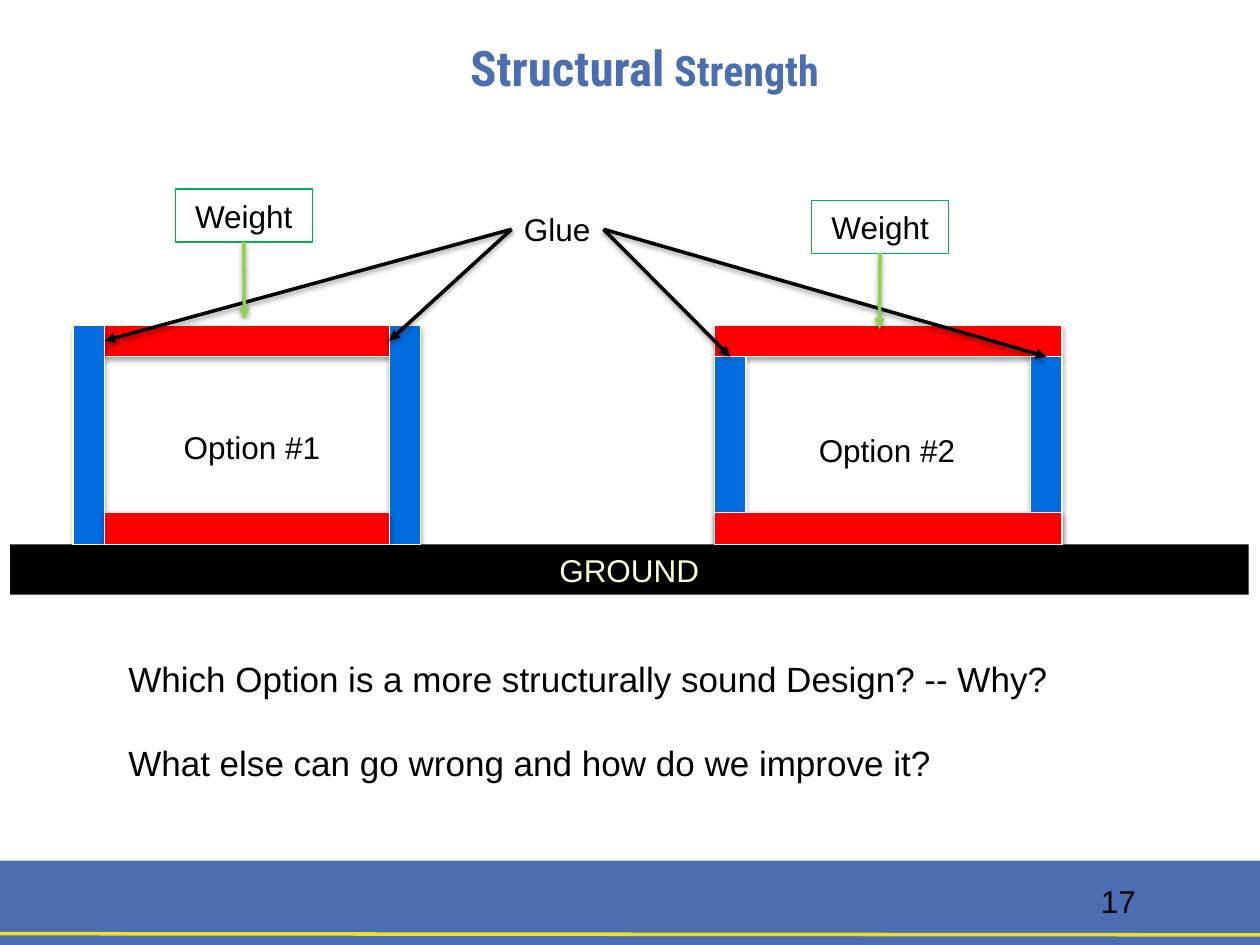
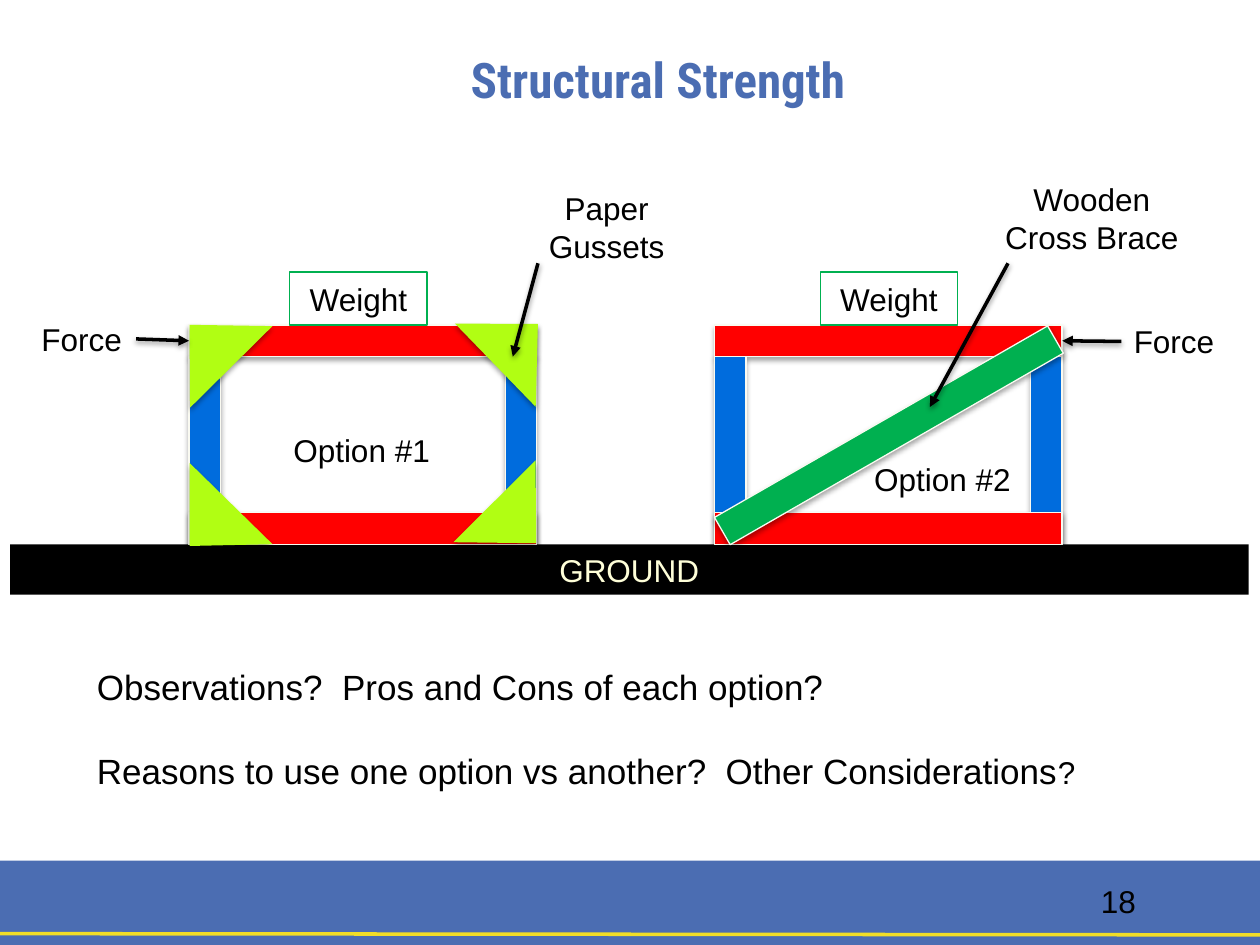
from dataclasses import dataclass
from typing import NamedTuple

from lxml.etree import SubElement
from pptx import Presentation
from pptx.dml.color import RGBColor
from pptx.enum.shapes import MSO_CONNECTOR, MSO_SHAPE
from pptx.enum.text import MSO_ANCHOR, PP_ALIGN
from pptx.oxml.ns import qn
from pptx.shapes.autoshape import Shape
from pptx.shapes.connector import Connector
from pptx.slide import Slide
from pptx.util import Inches, Pt

BLACK = RGBColor(0x00, 0x00, 0x00)
FOOTER_BLUE = RGBColor(0x4B, 0x6D, 0xB2)
FOOTER_YELLOW = RGBColor(0xF1, 0xDE, 0x27)
BEAM_RED = RGBColor(0xFF, 0x00, 0x00)
POST_BLUE = RGBColor(0x00, 0x6C, 0xDD)
EDGE_WHITE = RGBColor(0xFA, 0xFA, 0xF1)
GROUND_CREAM = RGBColor(0xFF, 0xFF, 0xD9)
BRACE_GREEN = RGBColor(0x00, 0xB0, 0x50)
LOAD_GREEN = RGBColor(0x92, 0xD0, 0x50)
GUSSET_LIME = RGBColor(0xB1, 0xFE, 0x13)

BODY_FONT = "Arial"
TITLE_FONT = "Roboto Condensed"

TOP, LEFT, BOTTOM, RIGHT = range(4)

FRAME_TOP = 2.58
GROUND_TOP = 4.32
FRAME_WIDTH = 2.76
STICK = 0.25


class Box(NamedTuple):
    left: float
    top: float
    width: float
    height: float


class Point(NamedTuple):
    x: float
    y: float


class Side(NamedTuple):
    shape: Shape
    site: int


class Run(NamedTuple):
    text: str
    size: float


class Shadow(NamedTuple):
    opacity: int
    distance: float


class Gusset(NamedTuple):
    left: float
    top: float
    rotation: float


@dataclass
class Frame:
    left: float
    beams_between_posts: bool = False


@dataclass
class BuiltFrame:
    top_beam: Shape
    left_post: Shape
    right_post: Shape


STICK_SHADOW = Shadow(35, 1.8)
ARROW_SHADOW = Shadow(38, 1.6)

GUSSETS = (
    Gusset(3.64, 2.5, 45.9),
    Gusset(3.63, 3.91, 135.1),
    Gusset(1.21, 2.51, 315.3),
    Gusset(1.21, 3.93, 224.4),
)


def inches(box: Box) -> list:
    return [Inches(length) for length in box]


def write(
    shape: Shape,
    *paragraphs: str | list[Run],
    size: float = 18,
    color: RGBColor = BLACK,
    font: str = BODY_FONT,
    bold: bool = False,
    align: PP_ALIGN = PP_ALIGN.LEFT,
    anchor: MSO_ANCHOR = MSO_ANCHOR.TOP,
    wrap: bool = True,
    gap: float = 0,
) -> None:
    frame = shape.text_frame
    frame.word_wrap = wrap
    frame.vertical_anchor = anchor
    for index, content in enumerate(paragraphs):
        paragraph = frame.add_paragraph() if index else frame.paragraphs[0]
        paragraph.alignment = align
        if index and gap:
            paragraph.space_before = Pt(gap)
        for piece in [Run(content, size)] if isinstance(content, str) else content:
            run = paragraph.add_run()
            run.text = piece.text
            run.font.size = Pt(piece.size)
            run.font.name = font
            run.font.bold = bold
            run.font.color.rgb = color


def add_label(slide: Slide, box: Box, *paragraphs: str | list[Run], **style) -> Shape:
    label = slide.shapes.add_textbox(*inches(box))
    write(label, *paragraphs, **style)
    return label


def cast_shadow(effects, shadow: Shadow) -> None:
    outer = SubElement(
        effects,
        qn("a:outerShdw"),
        blurRad=str(Pt(3.1)),
        dist=str(Pt(shadow.distance)),
        dir="5400000",
        rotWithShape="0",
    )
    tint = SubElement(outer, qn("a:srgbClr"), val=str(BLACK))
    SubElement(tint, qn("a:alpha"), val=str(shadow.opacity * 1000))


def add_block(
    slide: Slide,
    box: Box,
    fill: RGBColor | None = None,
    edge: RGBColor | None = None,
    shadow: Shadow | None = None,
    preset: MSO_SHAPE = MSO_SHAPE.RECTANGLE,
    rotation: float = 0,
) -> Shape:
    block = slide.shapes.add_shape(preset, *inches(box))
    block.rotation = rotation
    if fill is None:
        block.fill.background()
    else:
        block.fill.solid()
        block.fill.fore_color.rgb = fill
    if edge is None:
        block.line.fill.background()
    else:
        block.line.color.rgb = edge
        block.line.width = Pt(0.75)
    block.shadow.inherit = False
    if shadow:
        cast_shadow(block.element.spPr.find(qn("a:effectLst")), shadow)
    return block


def add_line(
    slide: Slide,
    start: Point | Side,
    end: Point | Side,
    color: RGBColor = BLACK,
    arrow: bool = True,
) -> Connector:
    corners = [
        Inches(length)
        for place in (start, end)
        for length in (place if isinstance(place, Point) else (0, 0))
    ]
    line = slide.shapes.add_connector(MSO_CONNECTOR.STRAIGHT, *corners)
    if isinstance(start, Side):
        line.begin_connect(*start)
    if isinstance(end, Side):
        line.end_connect(*end)
    line.line.color.rgb = color
    line.line.width = Pt(2)
    properties = line.element.spPr
    if arrow:
        SubElement(properties.find(qn("a:ln")), qn("a:tailEnd"), type="triangle")
    effects = SubElement(properties, qn("a:effectLst"))
    if arrow:
        cast_shadow(effects, ARROW_SHADOW)
    return line


def add_stick(slide: Slide, box: Box, color: RGBColor, rotation: float = 0) -> Shape:
    return add_block(slide, box, color, EDGE_WHITE, STICK_SHADOW, rotation=rotation)


def add_frame(slide: Slide, frame: Frame) -> BuiltFrame:
    inset = STICK if frame.beams_between_posts else 0
    post_top = FRAME_TOP if frame.beams_between_posts else FRAME_TOP + STICK
    beam_left, beam_width = frame.left + inset, FRAME_WIDTH - 2 * inset
    top_beam = add_stick(slide, Box(beam_left, FRAME_TOP, beam_width, STICK), BEAM_RED)
    right_post, left_post = (
        add_stick(slide, Box(left, post_top, STICK, GROUND_TOP - post_top), POST_BLUE)
        for left in (frame.left + FRAME_WIDTH - STICK, frame.left)
    )
    add_stick(slide, Box(beam_left, GROUND_TOP - STICK, beam_width, STICK), BEAM_RED)
    return BuiltFrame(top_beam, left_post, right_post)


def add_weight(slide: Slide, left: float, top: float) -> Shape:
    weight = add_block(slide, Box(left, top, 1.09, 0.42), edge=BRACE_GREEN)
    write(weight, "Weight", align=PP_ALIGN.CENTER, anchor=MSO_ANCHOR.MIDDLE)
    return weight


def start_slide(prs, title: list[Run], title_box: Box, number: int) -> Slide:
    slide = prs.slides.add_slide(prs.slide_layouts[5])
    add_block(slide, Box(0, 6.83, 10, 0.67), FOOTER_BLUE)
    add_line(slide, Point(0, 7.41), Point(10, 7.42), FOOTER_YELLOW, arrow=False)
    heading = slide.shapes.title
    heading.left, heading.top, heading.width, heading.height = inches(title_box)
    write(heading, title, font=TITLE_FONT, color=FOOTER_BLUE, bold=True, align=PP_ALIGN.CENTER)
    add_label(slide, Box(7.75, 6.95, 2.25, 0.4), str(number), align=PP_ALIGN.CENTER)
    ground = add_block(slide, Box(0.08, GROUND_TOP, 9.83, 0.4), BLACK)
    write(ground, "GROUND", color=GROUND_CREAM, align=PP_ALIGN.CENTER, anchor=MSO_ANCHOR.MIDDLE)
    return slide


def build_glue_slide(prs) -> None:
    title = [Run("Structural", 28), Run(" Strength", 24)]
    slide = start_slide(prs, title, Box(3.25, 0.25, 3.73, 0.72), 17)
    option_1 = add_frame(slide, Frame(0.58, beams_between_posts=True))
    option_2 = add_frame(slide, Frame(5.67))
    glue = add_label(slide, Box(4.06, 1.62, 0.73, 0.4), "Glue", wrap=False)
    for glue_side, joint in (
        (LEFT, Side(option_1.top_beam, RIGHT)),
        (LEFT, Side(option_1.top_beam, LEFT)),
        (RIGHT, Side(option_2.left_post, TOP)),
        (RIGHT, Side(option_2.right_post, TOP)),
    ):
        add_line(slide, Side(glue, glue_side), joint)
    add_label(slide, Box(1.36, 3.35, 1.3, 0.4), "Option #1", wrap=False)
    add_label(slide, Box(6.4, 3.37, 1.3, 0.4), "Option #2", wrap=False)
    for left, top, tip in ((1.39, 1.5, Point(1.94, 2.53)), (6.44, 1.59, Point(6.98, 2.61))):
        weight = add_weight(slide, left, top)
        add_line(slide, Side(weight, BOTTOM), tip, LOAD_GREEN)
    add_label(
        slide,
        Box(0.92, 5.17, 8.33, 1.11),
        "Which Option is a more structurally sound Design? -- Why?",
        "What else can go wrong and how do we improve it?",
        size=20,
        gap=24,
    )


def build_brace_slide(prs) -> None:
    title = [Run("Structural Strength", 28)]
    slide = start_slide(prs, title, Box(3.28, 0.34, 3.88, 0.58), 18)
    option_2 = add_frame(slide, Frame(5.67))
    option_1 = add_frame(slide, Frame(1.5))
    add_weight(slide, 6.51, 2.16)
    add_weight(slide, 2.3, 2.16)
    for gusset in GUSSETS:
        add_block(
            slide,
            Box(gusset.left, gusset.top, 0.92, 0.47),
            GUSSET_LIME,
            shadow=STICK_SHADOW,
            preset=MSO_SHAPE.ISOSCELES_TRIANGLE,
            rotation=gusset.rotation,
        )
    add_stick(slide, Box(6.93, 1.93, STICK, 3.05), BRACE_GREEN, rotation=60.1)
    add_label(slide, Box(2.23, 3.37, 1.3, 0.4), "Option #1", wrap=False)
    add_label(slide, Box(6.84, 3.6, 1.3, 0.4), "Option #2", wrap=False)
    add_label(slide, Box(4.25, 1.45, 1.13, 0.71), "Paper", "Gussets", align=PP_ALIGN.CENTER)
    add_line(slide, Point(4.27, 2.09), Point(4.07, 2.83))
    add_label(
        slide, Box(7.87, 1.38, 1.59, 0.71), "Wooden", "Cross Brace", align=PP_ALIGN.CENTER, wrap=False
    )
    add_line(slide, Point(8, 2.09), Point(7.38, 3.23))
    for left, top, force_side, joint in (
        (0.23, 2.49, RIGHT, Side(option_1.top_beam, LEFT)),
        (8.9, 2.51, LEFT, Side(option_2.top_beam, RIGHT)),
    ):
        force = add_label(slide, Box(left, top, 0.85, 0.4), "Force", wrap=False)
        add_line(slide, Side(force, force_side), joint)
    add_label(
        slide,
        Box(0.67, 5.23, 8.79, 1.11),
        "Observations?  Pros and Cons of each option?",
        [Run("Reasons to use one option vs another?  Other Considerations", 20), Run("?", 18)],
        size=20,
        gap=24,
    )


def main() -> None:
    prs = Presentation()
    prs.slide_width, prs.slide_height = Inches(10), Inches(7.5)
    build_glue_slide(prs)
    build_brace_slide(prs)
    prs.save("out.pptx")


if __name__ == "__main__":
    main()
